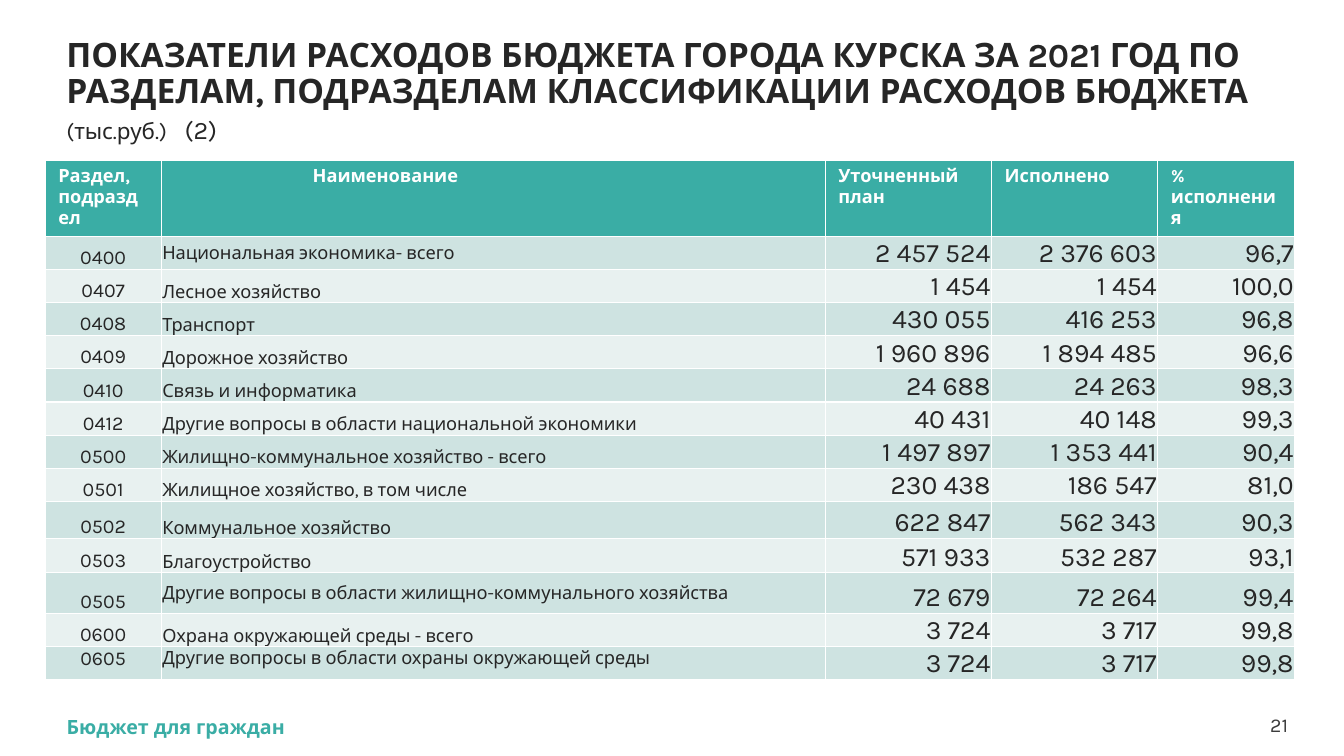
"""Build the slide with Kursk city budget expenditure by section for 2021."""
from dataclasses import dataclass

import lxml.etree
import pptx
import pptx.dml.color
import pptx.enum.text
import pptx.oxml.ns
import pptx.util

Cm = pptx.util.Cm
Pt = pptx.util.Pt
ALIGN = pptx.enum.text.PP_ALIGN
ANCHOR = pptx.enum.text.MSO_ANCHOR
FONT = "Karla"
TEAL, WHITE, DARK, GREY = "3AADA5", "FFFFFF", "262626", "3C3C3C"
BANDS = ("CEE3E1", "E8F1F0")
COLUMN_WIDTHS = (2.92, 16.74, 4.19, 4.19, 3.45)
HEADER_HEIGHT = 1.27
HEADERS = ("Раздел, подраздел", "Наименование", "Уточненный план", "Исполнено", "%\nисполнения")
HEADER_INDENTS = (0.33, 3.82, 0.33, 0.33, 0.33)
COLUMN_STYLES = ((ALIGN.CENTER, 14), (ALIGN.LEFT, 13)) + ((ALIGN.RIGHT, 19),) * 3


@dataclass
class BudgetRow:
    """One section of the budget with its row format."""
    code: str
    name: str
    plan: str
    actual: str
    percent: str
    height: float = 0.79
    anchor: ANCHOR = ANCHOR.BOTTOM
    name_anchor: ANCHOR = ANCHOR.BOTTOM


@dataclass
class Label:
    """One line of text at the foot of the slide."""
    text: str
    left: float
    top: float
    width: float
    color: str
    bold: bool
    align: ALIGN


ROWS = (
    BudgetRow("0400", "Национальная экономика- всего", "2 457 524", "2 376 603", "96,7",
              name_anchor=ANCHOR.MIDDLE),
    BudgetRow("0407", "Лесное хозяйство", "1 454", "1 454", "100,0"),
    BudgetRow("0408", "Транспорт", "430 055", "416 253", "96,8"),
    BudgetRow("0409", "Дорожное хозяйство", "1 960 896", "1 894 485", "96,6"),
    BudgetRow("0410", "Связь и информатика", "24 688", "24 263", "98,3"),
    BudgetRow("0412", "Другие вопросы в области национальной экономики", "40 431", "40 148", "99,3"),
    BudgetRow("0500", "Жилищно-коммунальное хозяйство - всего", "1 497 897", "1 353 441", "90,4"),
    BudgetRow("0501", "Жилищное хозяйство, в том числе", "230 438", "186 547", "81,0", 0.81),
    BudgetRow("0502", "Коммунальное хозяйство", "622 847", "562 343", "90,3", 0.94),
    BudgetRow("0503", "Благоустройство", "571 933", "532 287", "93,1", 0.86),
    BudgetRow("0505", "Другие вопросы в области жилищно-коммунального хозяйства",
              "72 679", "72 264", "99,4", 1.02, name_anchor=ANCHOR.MIDDLE),
    BudgetRow("0600", "Охрана окружающей среды - всего", "3 724", "3 717", "99,8", 0.84),
    BudgetRow("0605", "Другие вопросы в области охраны окружающей среды",
              "3 724", "3 717", "99,8", 0.69, ANCHOR.TOP, ANCHOR.TOP),
)
LABELS = (
    Label("Бюджет для граждан", 1.68, 18.01, 20, TEAL, True, ALIGN.LEFT),
    Label("21", 31.46, 17.96, 1, GREY, False, ALIGN.RIGHT),
)
TITLE_RUNS = (
    ("ПОКАЗАТЕЛИ РАСХОДОВ БЮДЖЕТА ГОРОДА КУРСКА ЗА 2021 ГОД ПО РАЗДЕЛАМ, "
     "ПОДРАЗДЕЛАМ КЛАССИФИКАЦИИ РАСХОДОВ БЮДЖЕТА ", 24, True),
    ("(тыс.руб.)", 16, False),
    ("\t", 24, True),
    ("(2)", 18, False),
)


def rgb(color: str) -> pptx.dml.color.RGBColor:
    """Turn a hex string into a colour."""
    return pptx.dml.color.RGBColor.from_string(color)


def format_text(text_frame, size: float, color: str, bold: bool, align: ALIGN) -> None:
    """Give every paragraph of a frame the same font and alignment."""
    for paragraph in text_frame.paragraphs:
        paragraph.alignment = align
        paragraph.font.name = FONT
        paragraph.font.size = Pt(size)
        paragraph.font.bold = bold
        paragraph.font.color.rgb = rgb(color)


def set_margins(target, left: float, top: float, right: float, bottom: float) -> None:
    """Set the inner margins of a cell or text frame in centimetres."""
    target.margin_left, target.margin_top = Cm(left), Cm(top)
    target.margin_right, target.margin_bottom = Cm(right), Cm(bottom)


def fill_cell(cell, text: str, color: str) -> None:
    """Put text into a cell over a solid fill."""
    cell.text = text
    cell.fill.solid()
    cell.fill.fore_color.rgb = rgb(color)


def add_title(slide) -> None:
    """Fill the title placeholder with its runs of different size."""
    title = slide.shapes.title
    title.left, title.top, title.width, title.height = Cm(1.42), Cm(0.84), Cm(32.84), Cm(2.1)
    text_frame = title.text_frame
    text_frame.word_wrap = True
    text_frame.auto_size = pptx.enum.text.MSO_AUTO_SIZE.SHAPE_TO_FIT_TEXT
    text_frame.vertical_anchor = ANCHOR.TOP
    paragraph = text_frame.paragraphs[0]
    paragraph.alignment = ALIGN.LEFT
    paragraph.line_spacing = 0.9
    qn = pptx.oxml.ns.qn
    tabs = lxml.etree.SubElement(paragraph._p.get_or_add_pPr(), qn("a:tabLst"))
    lxml.etree.SubElement(tabs, qn("a:tab"), pos=str(Cm(2.98)), algn="l")
    paragraph.font.name = FONT
    paragraph.font.color.rgb = rgb(DARK)
    for text, size, bold in TITLE_RUNS:
        run = paragraph.add_run()
        run.text = text
        run.font.size = Pt(size)
        run.font.bold = bold


def add_budget_table(slide) -> None:
    """Draw the table of budget sections."""
    height = HEADER_HEIGHT + sum(row.height for row in ROWS)
    table = slide.shapes.add_table(len(ROWS) + 1, len(HEADERS), Cm(1.14), Cm(4.04),
                                   Cm(sum(COLUMN_WIDTHS)), Cm(height)).table
    for column, width in zip(table.columns, COLUMN_WIDTHS):
        column.width = Cm(width)
    table.rows[0].height = Cm(HEADER_HEIGHT)
    for cell, text, indent in zip(table.rows[0].cells, HEADERS, HEADER_INDENTS):
        fill_cell(cell, text, TEAL)
        set_margins(cell, indent, 0.13, 0.33, 0.13)
        format_text(cell.text_frame, 13, WHITE, True, ALIGN.LEFT)
    for index, row in enumerate(ROWS):
        table_row = table.rows[index + 1]
        table_row.height = Cm(row.height)
        values = (row.code, row.name, row.plan, row.actual, row.percent)
        for cell, text, (align, size) in zip(table_row.cells, values, COLUMN_STYLES):
            fill_cell(cell, text, BANDS[index % 2])
            set_margins(cell, 0.03, 0.03, 0.03, 0)
            cell.vertical_anchor = row.anchor
            format_text(cell.text_frame, size, DARK, False, align)
        table_row.cells[1].vertical_anchor = row.name_anchor


def add_label(slide, label: Label) -> None:
    """Draw one line of text at the foot of the slide."""
    shape = slide.shapes.add_textbox(Cm(label.left), Cm(label.top), Cm(label.width), Cm(0.61))
    text_frame = shape.text_frame
    text_frame.word_wrap = True
    set_margins(text_frame, 0, 0, 0, 0)
    text_frame.text = label.text
    format_text(text_frame, 14, label.color, label.bold, label.align)


def main() -> None:
    """Build and save the presentation."""
    presentation = pptx.Presentation()
    presentation.slide_width, presentation.slide_height = Cm(33.87), Cm(19.05)
    slide = presentation.slides.add_slide(presentation.slide_layouts[5])
    add_title(slide)
    add_budget_table(slide)
    for label in LABELS:
        add_label(slide, label)
    presentation.save("out.pptx")


if __name__ == "__main__":
    main()
